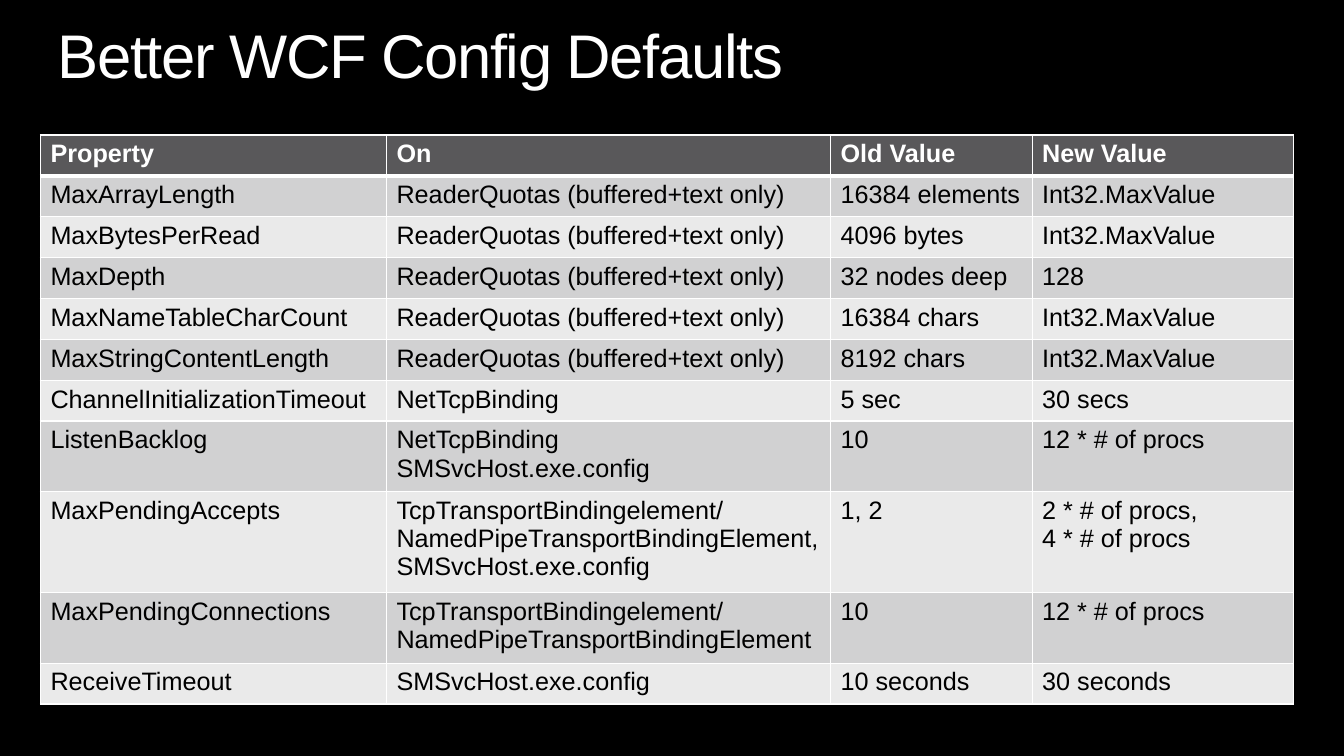
import pptx
import pptx.dml.color
import pptx.enum.text
import pptx.oxml
import pptx.oxml.ns
import pptx.util

Cm, Pt = pptx.util.Cm, pptx.util.Pt

# Content: "\n" starts a paragraph, "\v" breaks a line within one
TITLE = "Better WCF Config Defaults"
QUOTA = "ReaderQuotas (buffered+text only)"
MAX = "Int32.MaxValue"
HOST = "SMSvcHost.exe.config"
PIPE = "TcpTransportBindingelement/\nNamedPipeTransportBindingElement"
ROWS = [
    ("Property", "On", "Old Value", "New Value"),
    ("MaxArrayLength", QUOTA, "16384 elements", MAX),
    ("MaxBytesPerRead", QUOTA, "4096 bytes", MAX),
    ("MaxDepth", QUOTA, "32 nodes deep", "128"),
    ("MaxNameTableCharCount", QUOTA, "16384 chars", MAX),
    ("MaxStringContentLength", QUOTA, "8192 chars", MAX),
    ("ChannelInitializationTimeout", "NetTcpBinding", "5 sec", "30 secs"),
    ("ListenBacklog", "NetTcpBinding\n" + HOST, "10", "12 * # of procs"),
    ("MaxPendingAccepts", PIPE + ",\n" + HOST, "1, 2",
     "2 * # of procs,\v4 * # of procs"),
    ("MaxPendingConnections", PIPE, "10", "12 * # of procs"),
    ("ReceiveTimeout", HOST, "10 seconds", "30 seconds"),
]
WIDTHS = (8.72, 11.19, 5.08, 6.58)
HIGH = 1.03
FONT = "Arial"
COLORS = {"back": "000000", "text": "000000", "light": "FFFFFF",
          "head": "59585A", "odd": "D1D1D2", "even": "EAEAEA"}


def color(name):
    return pptx.dml.color.RGBColor.from_string(COLORS[name])


def write(para, text, size, ink, bold=False):
    for i, line in enumerate(text.split("\v")):
        if i:
            para.add_line_break()
        run = para.add_run()
        run.text = line
        font = run.font
        font.name, font.size, font.bold = FONT, Pt(size), bold
        font.color.rgb = color(ink)


def edge(cell, side, width):
    space = pptx.oxml.ns.nsdecls("a")
    line = pptx.oxml.parse_xml(
        f'<a:ln{side} {space} w="{Pt(width)}"><a:solidFill>'
        f'<a:srgbClr val="{COLORS["light"]}"/></a:solidFill></a:ln{side}>')
    cell._tc.get_or_add_tcPr().append(line)


deck = pptx.Presentation()
deck.slide_width, deck.slide_height = Cm(33.87), Cm(19.05)
slide = deck.slides.add_slide(deck.slide_layouts[6])
slide.background.fill.solid()
slide.background.fill.fore_color.rgb = color("back")

# Title
box = slide.shapes.add_textbox(Cm(1.45), Cm(0.64), Cm(30.96), Cm(1.7))
frame = box.text_frame
frame.word_wrap = True
frame.auto_size = pptx.enum.text.MSO_AUTO_SIZE.SHAPE_TO_FIT_TEXT
frame.margin_left = frame.margin_right = 0
frame.margin_top = frame.margin_bottom = 0
para = frame.paragraphs[0]
para.line_spacing = 0.9
write(para, TITLE, 44, "light")
para.runs[0].font._element.set("spc", "-100")

# Table
table = slide.shapes.add_table(
    len(ROWS), len(WIDTHS), Cm(1.02), Cm(3.4),
    Cm(sum(WIDTHS)), Cm(HIGH * len(ROWS))).table
table.horz_banding = False
for col, width in zip(table.columns, WIDTHS):
    col.width = Cm(width)
for r, row in enumerate(ROWS):
    table.rows[r].height = Cm(HIGH)
    head = r == 0
    shade = "head" if head else ("even", "odd")[r % 2]
    for c, text in enumerate(row):
        cell = table.cell(r, c)
        for side in "LRTB":
            thick = (r, side) in ((0, "B"), (1, "T"))
            edge(cell, side, 3 if thick else 1)
        cell.fill.solid()
        cell.fill.fore_color.rgb = color(shade)
        for i, part in enumerate(text.split("\n")):
            frame = cell.text_frame
            para = frame.add_paragraph() if i else frame.paragraphs[0]
            write(para, part, 18, "light" if head else "text", head)

deck.save("out.pptx")
